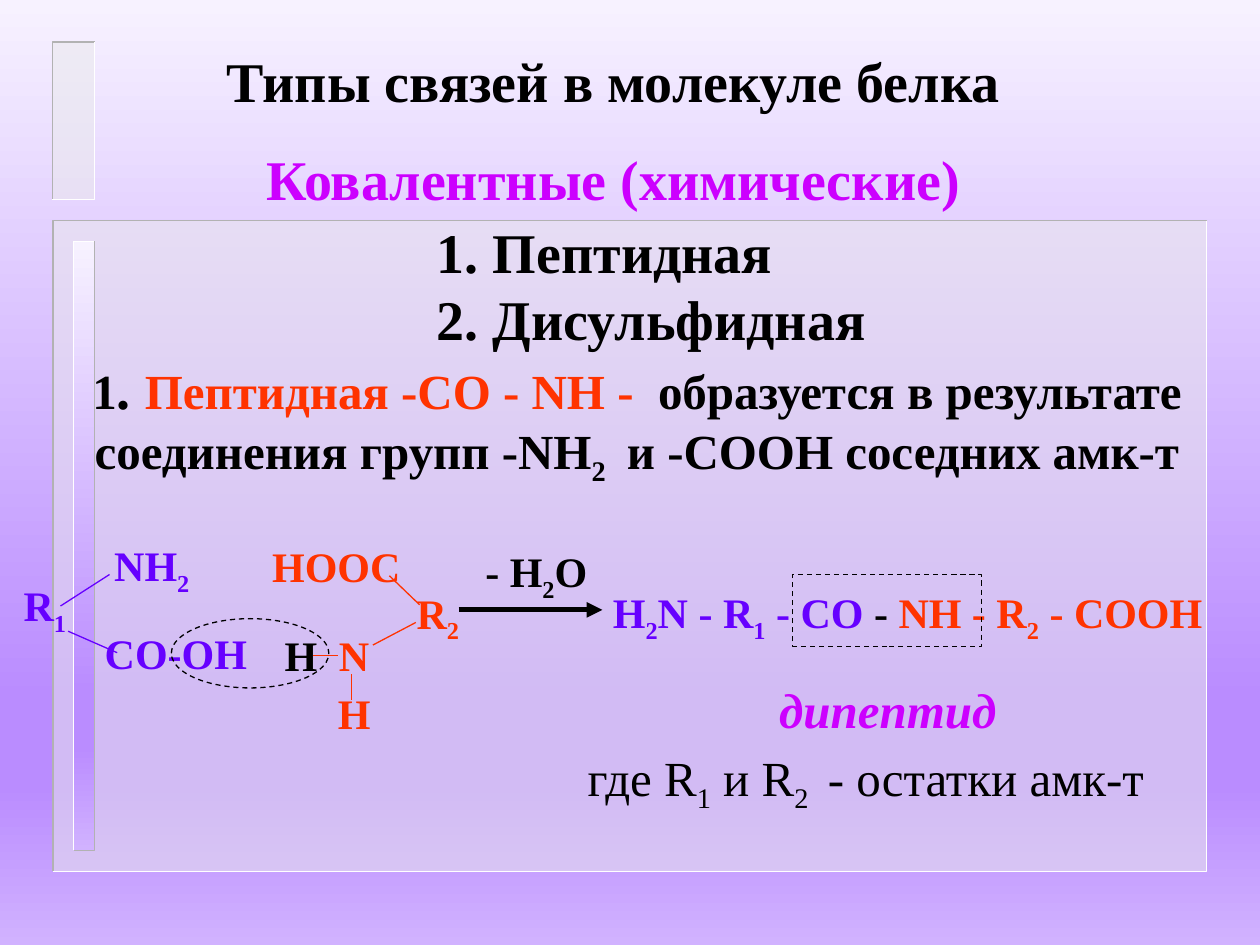
"""Build a slide on the covalent bonds in a protein molecule."""
from dataclasses import dataclass
from typing import Optional

from pptx import Presentation
from pptx.dml.color import RGBColor
from pptx.enum.dml import MSO_LINE
from pptx.enum.shapes import MSO_CONNECTOR, MSO_SHAPE
from pptx.enum.text import MSO_ANCHOR, MSO_AUTO_SIZE, PP_ALIGN
from pptx.oxml import parse_xml
from pptx.oxml.ns import nsdecls, qn
from pptx.util import Pt

BLACK = RGBColor(0x00, 0x00, 0x00)
WHITE = RGBColor(0xFF, 0xFF, 0xFF)
GREY = RGBColor(0xB2, 0xB2, 0xB2)
PANEL = RGBColor(0xEA, 0xEA, 0xEA)
VIOLET = RGBColor(0x66, 0x00, 0xFF)
RED = RGBColor(0xFF, 0x33, 0x00)
MAGENTA = RGBColor(0xCC, 0x00, 0xFF)
LILAC_STOPS = [
    (0, RGBColor(0xF7, 0xF2, 0xFF)),
    (74, RGBColor(0xBA, 0x8C, 0xFF)),
    (83, RGBColor(0xBA, 0x8C, 0xFF)),
    (100, RGBColor(0xD1, 0xB2, 0xFF)),
]
FONT = "Times New Roman"


@dataclass(frozen=True)
class Box:
    left: float
    top: float
    width: float
    height: float

    def pts(self) -> tuple:
        return Pt(self.left), Pt(self.top), Pt(self.width), Pt(self.height)


@dataclass(frozen=True)
class Run:
    text: str
    color: Optional[RGBColor] = None
    sub: bool = False
    size: Optional[float] = None


@dataclass(frozen=True)
class Label:
    box: Box
    lines: list
    color: RGBColor = BLACK
    size: float = 24
    bold: bool = True
    italic: bool = False
    wrap: bool = False
    align: PP_ALIGN = PP_ALIGN.CENTER


@dataclass(frozen=True)
class Bond:
    start: tuple
    end: tuple
    color: RGBColor


def sub(text: str, color: Optional[RGBColor] = None) -> Run:
    return Run(text, color, sub=True)


def fill_text(tf, label: Label) -> None:
    tf.word_wrap = label.wrap
    tf.auto_size = MSO_AUTO_SIZE.NONE
    tf.vertical_anchor = MSO_ANCHOR.MIDDLE
    for i, runs in enumerate(label.lines):
        p = tf.add_paragraph() if i else tf.paragraphs[0]
        p.alignment = label.align
        p.font.name = FONT
        p.font.size = Pt(label.size)
        p.font.bold = label.bold
        p.font.italic = label.italic
        p.font.color.rgb = label.color
        for run in runs:
            r = p.add_run()
            r.text = run.text
            if run.color is not None:
                r.font.color.rgb = run.color
            if run.size is not None:
                r.font.size = Pt(run.size)
            if run.sub:
                r._r.get_or_add_rPr().set("baseline", "-25000")


def add_label(shapes, label: Label) -> None:
    fill_text(shapes.add_textbox(*label.box.pts()).text_frame, label)


def set_gradient(fill, element) -> None:
    fill.solid()
    fill.fore_color.rgb = WHITE
    stops = "".join(
        f'<a:gs pos="{pos * 1000}"><a:srgbClr val="{color}"/></a:gs>'
        for pos, color in LILAC_STOPS
    )
    solid = next(element.iter(qn("a:solidFill")))
    solid.getparent().replace(solid, parse_xml(
        f'<a:gradFill {nsdecls("a")} rotWithShape="1"><a:gsLst>{stops}</a:gsLst>'
        '<a:lin ang="5400000" scaled="0"/></a:gradFill>'
    ))


def add_edge(shapes, points: list, color: RGBColor) -> None:
    fb = shapes.build_freeform(Pt(points[0][0]), Pt(points[0][1]))
    fb.add_line_segments([(Pt(x), Pt(y)) for x, y in points[1:]], close=False)
    sp = fb.convert_to_shape()
    sp.shadow.inherit = False
    sp.fill.background()
    sp.line.color.rgb = color
    sp.line.width = Pt(1)


def add_bevel(shapes, box: Box, sunken: bool) -> None:
    sp = shapes.add_shape(MSO_SHAPE.RECTANGLE, *box.pts())
    sp.shadow.inherit = False
    sp.line.fill.background()
    if sunken:
        sp.fill.solid()
        sp.fill.fore_color.rgb = PANEL
        color = next(sp._element.spPr.iter(qn("a:srgbClr")))
        color.append(parse_xml(f'<a:alpha {nsdecls("a")} val="50000"/>'))
    else:
        set_gradient(sp.fill, sp._element.spPr)
    right, bottom = box.left + box.width, box.top + box.height
    top_right, bottom_left = (right, box.top), (box.left, bottom)
    upper, lower = (GREY, WHITE) if sunken else (WHITE, GREY)
    add_edge(shapes, [top_right, (box.left, box.top), bottom_left], upper)
    add_edge(shapes, [top_right, (right, bottom), bottom_left], lower)


def add_line(shapes, bond: Bond, width: float = 0.75):
    ends = [Pt(v) for v in (*bond.start, *bond.end)]
    cx = shapes.add_connector(MSO_CONNECTOR.STRAIGHT, *ends)
    cx.line.color.rgb = bond.color
    cx.line.width = Pt(width)
    cx._element.spPr.append(parse_xml(f'<a:effectLst {nsdecls("a")}/>'))
    return cx


def add_arrow(shapes, bond: Bond) -> None:
    ln = add_line(shapes, bond, 3).line._get_or_add_ln()
    ln.append(parse_xml(f'<a:tailEnd {nsdecls("a")} type="triangle"/>'))


def add_dashed(shapes, kind: MSO_SHAPE, box: Box) -> None:
    sp = shapes.add_shape(kind, *box.pts())
    sp.shadow.inherit = False
    sp.fill.background()
    sp.line.color.rgb = BLACK
    sp.line.width = Pt(0.75)
    sp.line.dash_style = MSO_LINE.DASH


TITLE = Label(Box(90.7, 22.3, 519.8, 103), [
    [Run("Типы связей в молекуле белка")],
    [Run("Ковалентные (химические)", MAGENTA)],
], size=32, wrap=True)
LABELS = [
    Label(Box(230.4, 334, 39.6, 36), [[Run("R"), sub("2")]], RED),
    Label(Box(5.8, 329.8, 39.6, 36), [[Run("R"), sub("1")]], VIOLET),
    Label(Box(57.6, 306.7, 58.3, 36), [[Run("NH"), sub("2")]], VIOLET),
    Label(Box(52.6, 355, 95.8, 36), [[Run("CO-OH")]], VIOLET),
    Label(Box(148.3, 305.3, 87.8, 36), [[Run("HOOC")]], RED),
    Label(Box(186.5, 356.4, 31.7, 36), [[Run("N")]], RED),
    Label(Box(185.8, 389.5, 33.1, 36), [[Run("H")]], RED),
    Label(Box(155.5, 356.4, 33.1, 36), [[Run("H")]]),
    Label(Box(266.5, 310.3, 80, 36), [[Run("- H"), sub("2"), Run("O")]]),
    Label(Box(340.6, 333.4, 356, 36.7), [[
        Run("H"), sub("2"), Run("N - R"), sub("1"), Run(" - CO"), Run(" - ", BLACK),
        Run("NH - R", RED), sub("2", RED), Run(" - COOH", RED),
    ]], VIOLET),
    Label(Box(437.8, 384.5, 139, 41), [[Run("дипептид")]], MAGENTA, 28, italic=True),
    Label(Box(21.6, 200.2, 684.7, 79.9), [[
        Run("1"), Run(". ", size=32), Run("Пептидная -CO - NH -  ", RED),
        Run("образуется в результате соединения групп -NH"), sub("2   "),
        Run("и -COOH соседних амк-т"),
    ]], size=28, wrap=True),
    Label(Box(326.2, 425.5, 337, 41), [[
        Run("где R"), sub("1"), Run(" и R"), sub("2 "), Run(" - остатки амк-т"),
    ]], size=28, bold=False),
    Label(Box(242.6, 120.2, 270, 85), [[Run("1. Пептидная")], [Run("2. Дисульфидная")]],
          size=32, wrap=True, align=PP_ALIGN.LEFT),
]
BONDS = [
    Bond((34.6, 346.3), (62.6, 328.3), VIOLET), Bond((38.9, 360.7), (67, 373), VIOLET),
    Bond((200.9, 385.2), (200.9, 400.3), RED), Bond((193, 374.4), (178.6, 374.4), RED),
    Bond((213.1, 368.6), (237.6, 355.7), RED), Bond((222.5, 329), (239.8, 345.6), RED),
]


def main() -> None:
    prs = Presentation()
    prs.slide_width, prs.slide_height = Pt(720), Pt(540)
    slide = prs.slides.add_slide(prs.slide_layouts[5])
    shapes = slide.shapes
    set_gradient(slide.background.fill, slide._element)
    title = shapes.title
    title.left, title.top, title.width, title.height = TITLE.box.pts()
    fill_text(title.text_frame, TITLE)
    title.text_frame.paragraphs[1].space_before = Pt(18)
    add_bevel(shapes, Box(30.5, 126, 659, 372), sunken=True)
    add_bevel(shapes, Box(42, 138, 12, 348), sunken=False)
    add_bevel(shapes, Box(30, 24, 24, 90), sunken=True)
    for label in LABELS:
        add_label(shapes, label)
    for bond in BONDS:
        add_line(shapes, bond)
    add_dashed(shapes, MSO_SHAPE.OVAL, Box(97.9, 353.5, 90, 39.6))
    add_dashed(shapes, MSO_SHAPE.RECTANGLE, Box(452.9, 328.3, 108, 41))
    add_arrow(shapes, Bond((262.1, 348.5), (344.2, 348.5), BLACK))
    prs.save("out.pptx")


if __name__ == "__main__":
    main()
